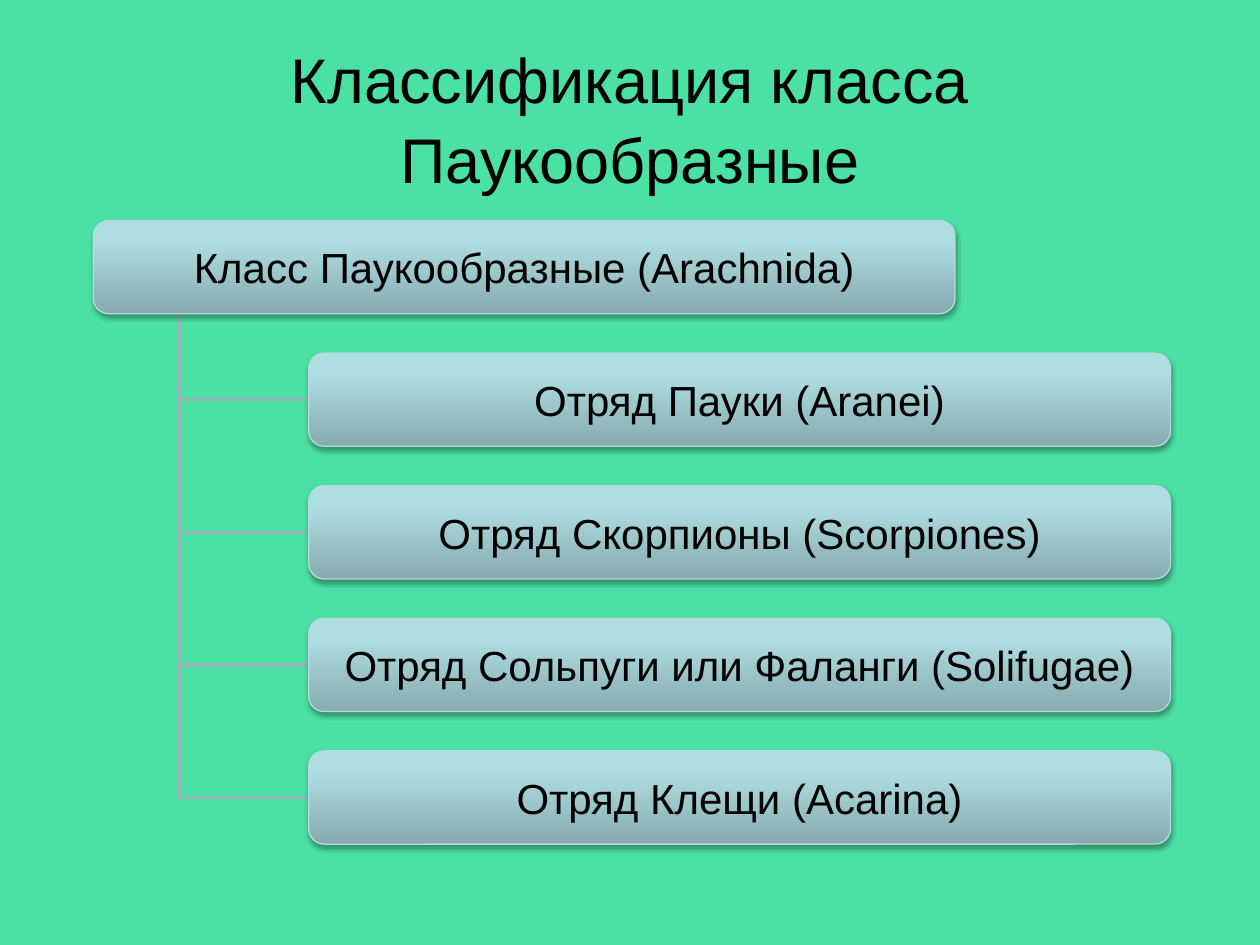
import dataclasses

import lxml.etree
import pptx
import pptx.dml.color
import pptx.enum.shapes
import pptx.enum.text
import pptx.oxml
import pptx.oxml.ns
import pptx.util

Inches = pptx.util.Inches

COLORS = {
    "background": "4BE1A4",
    "text": "000000",
    "branch": "96B3B6",
    "edge": "B6DCDF",
    "shadow": "000000",
    "box_bottom": "87ABAE",
    "box_middle": "AFDEE2",
    "box_top": "AFE0E4",
}
FONT = "Arial"
BOX_WIDTH, BOX_HEIGHT = 6.84, 0.74
CLASS_LEFT, ORDER_LEFT = 0.74, 2.45
FIRST_TOP, ROW_STEP = 1.75, 1.0525
TRUNK_X = 1.42
ORDERS = [
    "Отряд Пауки (Aranei)",
    "Отряд Скорпионы (Scorpiones)",
    "Отряд Сольпуги или Фаланги (Solifugae)",
    "Отряд Клещи (Acarina)",
]


@dataclasses.dataclass
class TaxonBox:
    text: str
    left: float
    top: float

    @property
    def middle(self) -> float:
        return self.top + BOX_HEIGHT / 2

    @property
    def bottom(self) -> float:
        return self.top + BOX_HEIGHT


def rgb(name: str) -> pptx.dml.color.RGBColor:
    return pptx.dml.color.RGBColor.from_string(COLORS[name])


def write_text(shape, text: str, *, size: float, inset: float, spacing: float = 1.0) -> None:
    frame = shape.text_frame
    frame.word_wrap = True
    frame.auto_size = pptx.enum.text.MSO_AUTO_SIZE.NONE
    frame.vertical_anchor = pptx.enum.text.MSO_ANCHOR.MIDDLE
    frame.margin_left = frame.margin_right = Inches(inset)
    frame.margin_top = frame.margin_bottom = Inches(0.05)
    para = frame.paragraphs[0]
    para.alignment = pptx.enum.text.PP_ALIGN.CENTER
    para.line_spacing = spacing
    span = para.add_run()
    span.text = text
    span.font.name = FONT
    span.font.size = pptx.util.Pt(size)
    span.font.color.rgb = rgb("text")


def shade_box(shape) -> None:
    stops = [(0, "box_bottom"), (80, "box_middle"), (100, "box_top")]
    stop_xml = "".join(
        f'<a:gs pos="{position * 1000}"><a:srgbClr val="{COLORS[name]}"/></a:gs>'
        for position, name in stops
    )
    namespace = pptx.oxml.ns.nsdecls("a")
    gradient = pptx.oxml.parse_xml(
        f'<a:gradFill {namespace} rotWithShape="1"><a:gsLst>{stop_xml}</a:gsLst>'
        '<a:lin ang="16200000" scaled="0"/></a:gradFill>'
    )
    shadow = pptx.oxml.parse_xml(
        f'<a:outerShdw {namespace} blurRad="{pptx.util.Pt(3.1)}" dist="{pptx.util.Pt(1.8)}" '
        f'dir="5400000" rotWithShape="0"><a:srgbClr val="{COLORS["shadow"]}">'
        '<a:alpha val="35000"/></a:srgbClr></a:outerShdw>'
    )
    shape.fill.background()
    properties = shape.element.spPr
    properties.replace(properties.find(pptx.oxml.ns.qn("a:noFill")), gradient)
    shape.shadow.inherit = False
    properties.find(pptx.oxml.ns.qn("a:effectLst")).append(shadow)


def draw_box(page, box: TaxonBox) -> None:
    shape = page.shapes.add_shape(
        pptx.enum.shapes.MSO_SHAPE.ROUNDED_RECTANGLE,
        Inches(box.left), Inches(box.top), Inches(BOX_WIDTH), Inches(BOX_HEIGHT),
    )
    shade_box(shape)
    shape.line.color.rgb = rgb("edge")
    shape.line.width = pptx.util.Pt(0.75)
    write_text(shape, box.text, size=24, inset=0.06)


def draw_branch(page, parent: TaxonBox, child: TaxonBox) -> None:
    builder = page.shapes.build_freeform(Inches(TRUNK_X), Inches(parent.bottom))
    builder.add_line_segments(
        [
            (Inches(TRUNK_X), Inches(child.middle)),
            (Inches(child.left), Inches(child.middle)),
        ],
        close=False,
    )
    branch = builder.convert_to_shape()
    branch.shadow.inherit = False
    branch.fill.background()
    branch.line.color.rgb = rgb("branch")
    branch.line.width = pptx.util.Pt(2)


def main() -> None:
    deck = pptx.Presentation()
    deck.slide_width, deck.slide_height = Inches(10), Inches(7.5)
    page = deck.slides.add_slide(deck.slide_layouts[5])
    page.background.fill.solid()
    page.background.fill.fore_color.rgb = rgb("background")

    title = page.shapes.title
    title.left, title.top = Inches(0.5), Inches(0.3)
    title.width, title.height = Inches(9), Inches(1.25)
    write_text(title, "Классификация класса Паукообразные", size=36, inset=0.1, spacing=1.05)

    class_box = TaxonBox("Класс Паукообразные (Arachnida)", CLASS_LEFT, FIRST_TOP)
    order_boxes = [
        TaxonBox(text, ORDER_LEFT, FIRST_TOP + row * ROW_STEP)
        for row, text in enumerate(ORDERS, start=1)
    ]
    for box in reversed(order_boxes):
        draw_branch(page, class_box, box)
    for box in [class_box, *order_boxes]:
        draw_box(page, box)

    deck.save("out.pptx")


if __name__ == "__main__":
    main()
